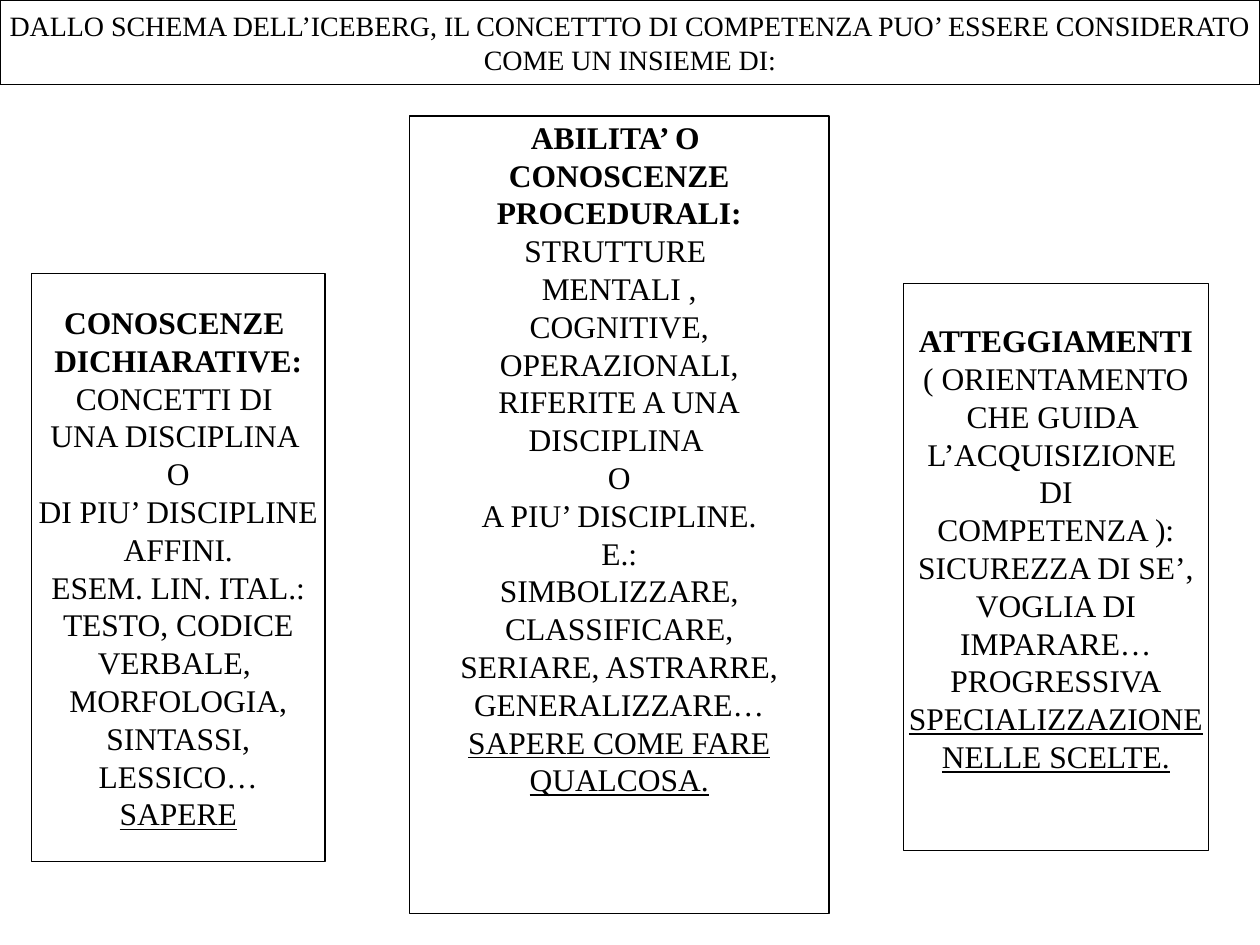
from pptx import Presentation
from pptx.dml.color import RGBColor
from pptx.enum import shapes, text
from pptx.util import Inches, Pt

BLACK = RGBColor(0, 0, 0)
WHITE = RGBColor(255, 255, 255)
FONT = "Times New Roman"
LINE_HEIGHT = 0.3  # inches taken by one 18 pt line

TITLE = [
    "DALLO SCHEMA DELL’ICEBERG, IL CONCETTTO DI COMPETENZA PUO’ ESSERE CONSIDERATO",
    "COME UN INSIEME DI:",
]

# Each column: box, bold heading, plain body, underlined ending, free lines below
COLUMNS = [
    dict(
        box=(0.25, 2.17, 2.33, 4.67),
        heading=["CONOSCENZE ", "DICHIARATIVE:"],
        body=["CONCETTI DI ", "UNA DISCIPLINA ", "O", "DI PIU’ DISCIPLINE", "AFFINI.",
              "ESEM. LIN. ITAL.:", "TESTO, CODICE", "VERBALE, ", "MORFOLOGIA,",
              "SINTASSI,", "LESSICO…"],
        ending=["SAPERE"],
        free_lines=0,
    ),
    dict(
        box=(3.25, 0.92, 3.33, 6.33),
        heading=["ABILITA’ O ", "CONOSCENZE", "PROCEDURALI:"],
        body=["STRUTTURE ", "MENTALI ,", "COGNITIVE,", "OPERAZIONALI,",
              "RIFERITE A UNA", "DISCIPLINA ", "O", "A PIU’ DISCIPLINE.", "E.:",
              "SIMBOLIZZARE,", "CLASSIFICARE,", "SERIARE, ASTRARRE,", "GENERALIZZARE…"],
        ending=["SAPERE COME FARE", "QUALCOSA."],
        free_lines=3,
    ),
    dict(
        box=(7.17, 2.25, 2.42, 4.5),
        heading=["ATTEGGIAMENTI"],
        body=["( ORIENTAMENTO", "CHE GUIDA ", "L’ACQUISIZIONE ", "DI", "COMPETENZA ):",
              "SICUREZZA DI SE’,", "VOGLIA DI", "IMPARARE…", "PROGRESSIVA"],
        ending=["SPECIALIZZAZIONE", "NELLE SCELTE."],
        free_lines=1,
    ),
]


def format_box(sp, free_lines=0):
    """White box with a thin black outline and unwrapped, centred text."""
    sp.fill.solid()
    sp.fill.fore_color.rgb = WHITE
    sp.line.color.rgb = BLACK
    sp.line.width = Pt(0.75)
    frame_format = dict(
        word_wrap=False,
        auto_size=text.MSO_AUTO_SIZE.NONE,
        vertical_anchor=text.MSO_ANCHOR.MIDDLE,
        margin_left=0,
        margin_right=0,
        margin_bottom=Inches(0.05 + free_lines * LINE_HEIGHT),
    )
    for name, value in frame_format.items():
        setattr(sp.text_frame, name, value)


def write_lines(tf, lines, size):
    """Write (text, font format) pairs, one paragraph each."""
    for i, (line, extra) in enumerate(lines):
        p = tf.add_paragraph() if i else tf.paragraphs[0]
        p.alignment = text.PP_ALIGN.CENTER
        r = p.add_run()
        r.text = line
        for name, value in dict(name=FONT, size=Pt(size), **extra).items():
            setattr(r.font, name, value)
        r.font.color.rgb = BLACK


def add_title(s, box):
    sp = s.shapes.title
    sp.left, sp.top, sp.width, sp.height = map(Inches, box)
    format_box(sp)
    write_lines(sp.text_frame, [(line, {}) for line in TITLE], 16)


def add_column(s, box, heading, body, ending, free_lines):
    sp = s.shapes.add_shape(shapes.MSO_SHAPE.RECTANGLE, *map(Inches, box))
    sp.shadow.inherit = False
    format_box(sp, free_lines)
    lines = [(line, dict(bold=True)) for line in heading]
    lines += [(line, {}) for line in body]
    lines += [(line, dict(underline=True)) for line in ending]
    write_lines(sp.text_frame, lines, 18)


def main():
    prs = Presentation()
    prs.slide_width, prs.slide_height = Inches(10), Inches(7.5)
    s = prs.slides.add_slide(prs.slide_layouts[5])  # title only

    # Title band across the top
    add_title(s, (0, 0, 10, 0.67))

    # Three components of competence
    for column in COLUMNS:
        add_column(s, **column)

    prs.save("out.pptx")


if __name__ == "__main__":
    main()
